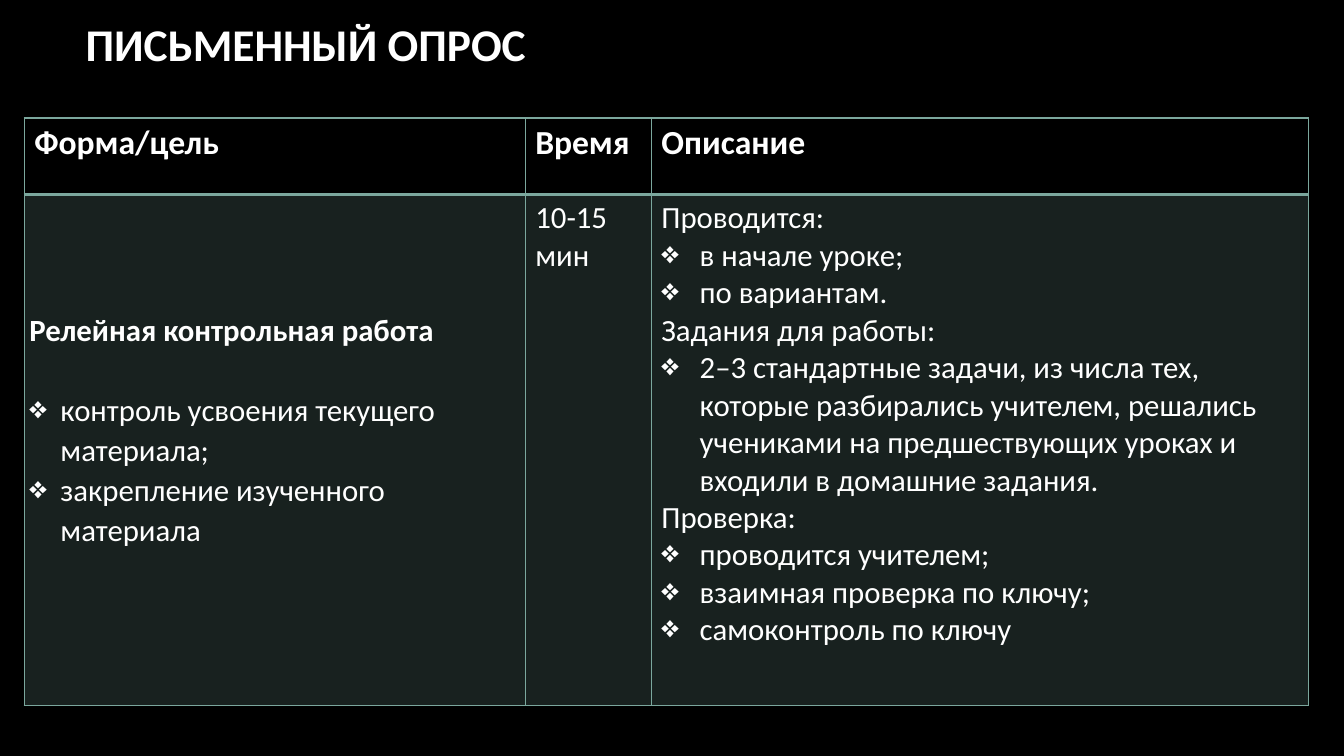
"""Build a dark slide with a table that describes a written quiz."""
from lxml import etree
from pptx import Presentation, util as u
from pptx.dml.color import RGBColor
from pptx.enum import text
from pptx.oxml import ns

theme = {"font": "Calibri", "back": "000000", "ink": "FFFFFF", "line": "7BA79D",
         "title": 32.4, "head": 24, "body": 22, "tint": 20, "thin": 1, "thick": 2}
mark = "❖ "


def put(frame, lines, size, bold=False, hang=0.38, lead=None, gap=0):
    """Write lines into a frame; a leading mark turns a line into a bullet."""
    frame.word_wrap = True
    for i, line in enumerate(lines):
        par = frame.paragraphs[0] if i == 0 else frame.add_paragraph()
        if lead:
            par.line_spacing = lead
        par.space_after = u.Pt(0 if i else gap)
        run = par.add_run()
        run.text = line.removeprefix(mark)
        font = run.font
        font.name, font.size = theme["font"], u.Pt(size)
        font.bold = bold or (gap > 0 and i == 0)
        font.color.rgb = RGBColor.from_string(theme["ink"])
        if line.startswith(mark):
            prop = par._p.get_or_add_pPr()
            prop.set("marL", str(u.Inches(hang)))
            prop.set("indent", str(-u.Inches(hang)))
            etree.SubElement(prop, ns.qn("a:buChar")).set("char", mark.strip())


def rule(cell, sides):
    """Draw the sides of a cell, given as pairs of a letter and a width."""
    prop = cell._tc.get_or_add_tcPr()
    for i, (side, width) in enumerate(sides):
        line = etree.Element(ns.qn(f"a:ln{side}"), w=str(u.Pt(width)))
        fill = etree.SubElement(line, ns.qn("a:solidFill"))
        etree.SubElement(fill, ns.qn("a:srgbClr")).set("val", theme["line"])
        prop.insert(i, line)


deck = Presentation()
deck.slide_width, deck.slide_height = u.Inches(13.33), u.Inches(7.5)
slide = deck.slides.add_slide(deck.slide_layouts[6])
slide.background.fill.solid()
slide.background.fill.fore_color.rgb = RGBColor.from_string(theme["back"])

title = slide.shapes.add_textbox(*map(u.Inches, (0.75, 0.13, 11.08, 0.61))).text_frame
title.vertical_anchor = text.MSO_ANCHOR.MIDDLE
put(title, ["ПИСЬМЕННЫЙ ОПРОС"], theme["title"], bold=True)

cols, rows = (4.97, 1.25, 6.52), (0.76, 5.07)
box = map(u.Inches, (0.24, 1.17, sum(cols), sum(rows)))
table = slide.shapes.add_table(len(rows), len(cols), *box).table
table.horz_banding = False
for col, width in zip(table.columns, cols):
    col.width = u.Inches(width)
for row, height in zip(table.rows, rows):
    row.height = u.Inches(height)

heads = ("Форма/цель", "Время", "Описание")
goal = ["Релейная контрольная работа",
        "❖ контроль усвоения текущего материала;",
        "❖ закрепление изученного материала"]
about = ["Проводится:",
         "❖ в начале уроке;",
         "❖ по вариантам.",
         "Задания для работы:",
         "❖ 2–3 стандартные задачи, из числа тех, которые разбирались учителем, "
         "решались учениками на предшествующих уроках и входили в домашние задания.",
         "Проверка:",
         "❖ проводится учителем;",
         "❖ взаимная проверка по ключу;",
         "❖ самоконтроль по ключу"]
thin, thick = theme["thin"], theme["thick"]

for i, head in enumerate(heads):
    cell = table.cell(0, i)
    cell.fill.background()
    rule(cell, zip("LRTB", (thin, thin, thin, thick)))
    put(cell.text_frame, [head], theme["head"], bold=True)

for i, lines in enumerate((goal, ["10-15 мин"], about)):
    cell = table.cell(1, i)
    cell.fill.solid()
    cell.fill.fore_color.rgb = RGBColor.from_string(theme["line"])
    tone = cell._tc.tcPr.find(".//" + ns.qn("a:srgbClr"))
    etree.SubElement(tone, ns.qn("a:alpha")).set("val", str(theme["tint"] * 1000))
    rule(cell, zip("LRTB", (thin, thin, thick, thin)))
    form = {"hang": 0.31, "lead": 1.07, "gap": 28.7} if lines is goal else {}
    put(cell.text_frame, lines, theme["body"], **form)

first = table.cell(1, 0)
first.vertical_anchor = text.MSO_ANCHOR.MIDDLE
first.margin_left = first.margin_right = first.margin_top = u.Inches(0.05)
first.margin_bottom = u.Inches(0.45)

deck.save("out.pptx")
